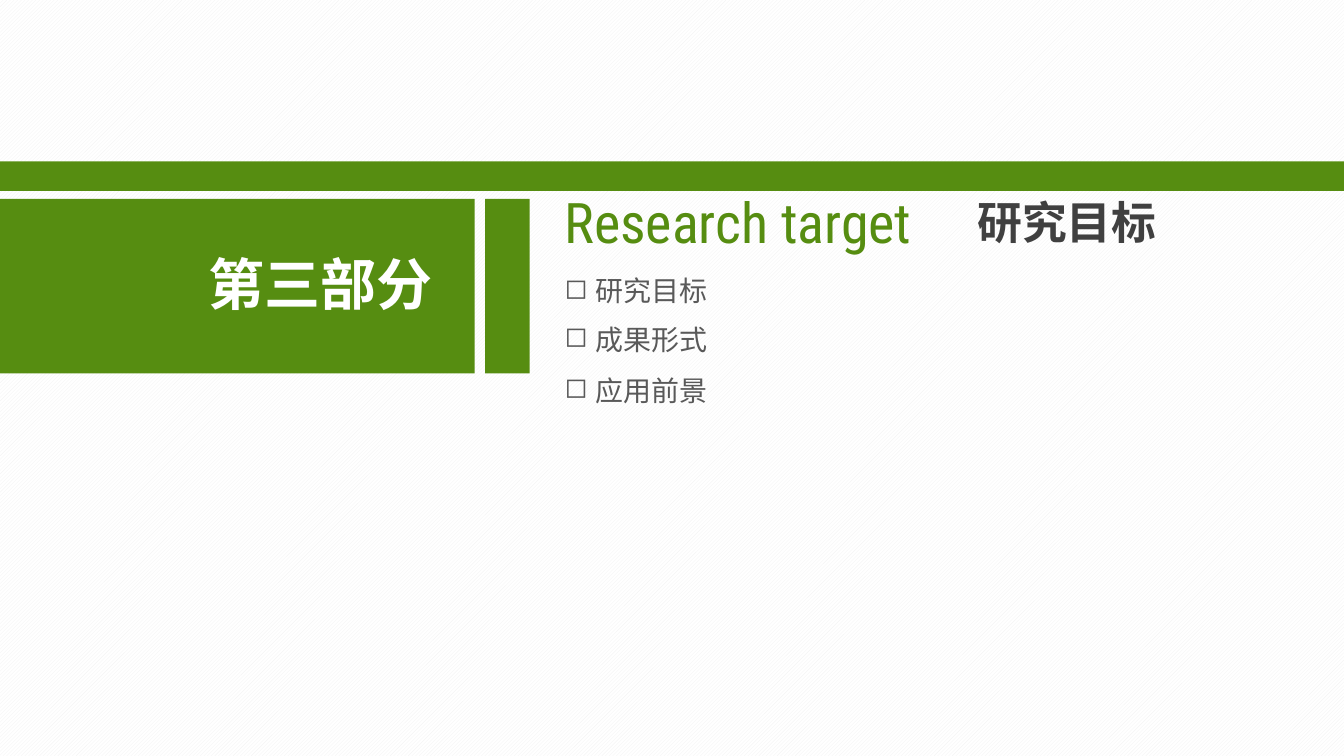
"""Build the section divider slide for part three, research target."""
from dataclasses import dataclass

from lxml.etree import SubElement
from pptx import Presentation
from pptx.dml.color import RGBColor as Rgb
from pptx.enum.dml import MSO_PATTERN as Pattern
from pptx.enum.shapes import MSO_SHAPE as Shape
from pptx.enum.text import MSO_AUTO_SIZE as AutoSize
from pptx.oxml.ns import qn
from pptx.util import Cm, Pt


@dataclass(frozen=True)
class Theme:
    """Colours, fonts and type sizes of the slide."""
    green: str = "568D11"
    white: str = "FFFFFF"
    hatch: str = "F2F2F2"
    dark: str = "404040"
    grey: str = "595959"
    chinese: str = "Noto Sans CJK SC"
    latin: str = "Roboto Condensed"
    title: int = 30
    subtitle: int = 24
    topic: int = 15


THEME = Theme()
WIDTH, HEIGHT = 25.4, 14.29
BAND_TOP, BAND_HEIGHT = 3.76, 3.3
TEXT_LEFT = 10.49

BARS = [
    (0, BAND_TOP, 8.97, BAND_HEIGHT),
    (0, 3.05, WIDTH, 0.56),
    (9.17, BAND_TOP, 0.84, BAND_HEIGHT),
]
HEADINGS = [
    ("第三部分", (3.76, 4.62, 4.65, 1.47), THEME.title, THEME.chinese, THEME.white, True),
    ("Research target", (TEXT_LEFT, 3.45, 7.42, 1.47), THEME.title, THEME.latin, THEME.green, False),
    ("研究目标", (18.29, 3.58, 3.81, 1.22), THEME.subtitle, THEME.chinese, THEME.dark, True),
]
TOPICS = [("研究目标", 5.08), ("成果形式", 5.99), ("应用前景", 6.96)]
TOPIC_SIZE = (3.12, 0.84)
TOPIC_INDENT = 0.58
BULLET = "◻"
FRAME_FORMAT = {
    "margin_left": Cm(0.18),
    "margin_right": Cm(0.18),
    "margin_top": Cm(0.1),
    "margin_bottom": Cm(0.1),
    "word_wrap": False,
    "auto_size": AutoSize.SHAPE_TO_FIT_TEXT,
}


def apply_format(target, values):
    """Set every attribute named in values on the target."""
    for name, value in values.items():
        setattr(target, name, value)


def add_bar(slide, place):
    """Add one green bar."""
    bar = slide.shapes.add_shape(Shape.RECTANGLE, *map(Cm, place))
    bar.shadow.inherit = False
    bar.fill.solid()
    bar.fill.fore_color.rgb = Rgb.from_string(THEME.green)
    bar.line.fill.background()


def add_label(slide, wording, place, size, face, color, bold=False):
    """Add one line of text and return its paragraph."""
    frame = slide.shapes.add_textbox(*map(Cm, place)).text_frame
    apply_format(frame, FRAME_FORMAT)
    paragraph = frame.paragraphs[0]
    run = paragraph.add_run()
    run.text = wording
    apply_format(run.font, {"size": Pt(size), "bold": bold, "name": face})
    run.font.color.rgb = Rgb.from_string(color)
    SubElement(run.font._element, qn("a:ea"), typeface=face)
    return paragraph


def add_bullet(paragraph):
    """Give the paragraph a hanging square bullet."""
    properties = paragraph._p.get_or_add_pPr()
    indent = Cm(TOPIC_INDENT)
    properties.set("marL", str(indent))
    properties.set("indent", str(-indent))
    SubElement(properties, qn("a:buChar"), char=BULLET)


def main():
    """Create the deck and save it."""
    deck = Presentation()
    apply_format(deck, {"slide_width": Cm(WIDTH), "slide_height": Cm(HEIGHT)})
    slide = deck.slides.add_slide(deck.slide_layouts[6])

    backdrop = slide.background.fill
    backdrop.patterned()
    backdrop.pattern = Pattern.LIGHT_UPWARD_DIAGONAL
    backdrop.fore_color.rgb = Rgb.from_string(THEME.hatch)
    backdrop.back_color.rgb = Rgb.from_string(THEME.white)

    for place in BARS:
        add_bar(slide, place)
    for heading in HEADINGS:
        add_label(slide, *heading)
    for topic, top in TOPICS:
        place = (TEXT_LEFT, top, *TOPIC_SIZE)
        add_bullet(add_label(slide, topic, place, THEME.topic, THEME.chinese, THEME.grey))

    deck.save("out.pptx")


if __name__ == "__main__":
    main()
